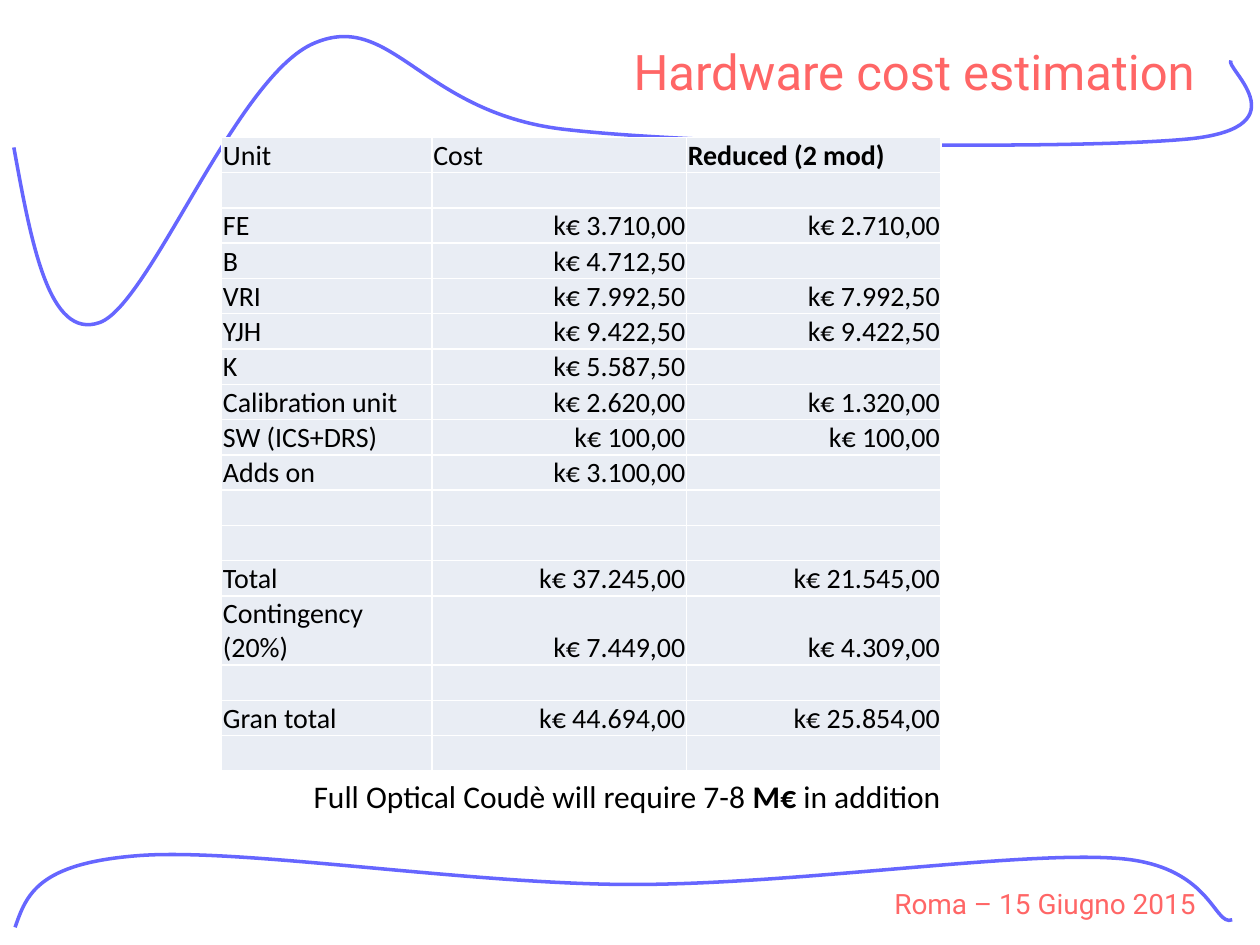
from dataclasses import dataclass

import pptx
import pptx.dml.color
import pptx.enum.text
import pptx.oxml.ns
import pptx.util
from lxml import etree

Inches = pptx.util.Inches
Pt = pptx.util.Pt
ALIGN = pptx.enum.text.PP_ALIGN
ANCHOR = pptx.enum.text.MSO_ANCHOR


@dataclass(frozen=True)
class Theme:
    curve: str = "6666FF"
    accent: str = "FF6666"
    ink: str = "000000"
    cell: str = "E9EDF4"
    heading_font: str = "Roboto"
    body_font: str = "Calibri"
    title_size: int = 28
    note_size: int = 18
    table_size: int = 16
    date_size: int = 16
    curve_width: int = 2


THEME = Theme()

# Each curve: box (left, top, width, height), start, cubic segments.
TOP_CURVE = (
    (0.11, 0.29, 9.82, 2.29),
    (0.11, 1.17),
    [
        [(0.25, 1.94), (0.39, 2.7), (0.79, 2.56)],
        [(1.19, 2.42), (1.88, 0.59), (2.5, 0.34)],
        [(3.12, 0.08), (3.35, 0.91), (4.51, 1.03)],
        [(5.67, 1.16), (8.58, 1.19), (9.46, 1.1)],
        [(10.34, 1), (9.71, 0.53), (9.77, 0.48)],
    ],
)
BOTTOM_CURVE = (
    (0.12, 6.78, 9.66, 0.58),
    (0.12, 7.36),
    [
        [(0.21, 7.1), (0.3, 6.85), (1.11, 6.79)],
        [(1.93, 6.73), (3.73, 7.02), (5.02, 7.02)],
        [(6.3, 7.02), (8.03, 6.76), (8.83, 6.81)],
        [(9.62, 6.85), (9.63, 7.36), (9.78, 7.3)],
    ],
)

BLANK = ("", "", "")
COSTS = [
    ("Unit", "Cost", "Reduced (2 mod)"),
    BLANK,
    ("FE", "k€ 3.710,00", "k€ 2.710,00"),
    ("B", "k€ 4.712,50", ""),
    ("VRI", "k€ 7.992,50", "k€ 7.992,50"),
    ("YJH", "k€ 9.422,50", "k€ 9.422,50"),
    ("K", "k€ 5.587,50", ""),
    ("Calibration unit", "k€ 2.620,00", "k€ 1.320,00"),
    ("SW (ICS+DRS)", "k€ 100,00", "k€ 100,00"),
    ("Adds on", "k€ 3.100,00", ""),
    BLANK,
    BLANK,
    ("Total", "k€ 37.245,00", "k€ 21.545,00"),
    ("Contingency (20%)", "k€ 7.449,00", "k€ 4.309,00"),
    BLANK,
    ("Gran total", "k€ 44.694,00", "k€ 25.854,00"),
    BLANK,
]
COLUMN_WIDTHS = (1.67, 2.02, 2.02)
ROW_HEIGHT = 0.28
TWO_LINE_HEIGHT = 0.55


def rgb(value):
    return pptx.dml.color.RGBColor.from_string(value)


def write_text(tf, runs, *, font, size, color, align=ALIGN.LEFT):
    """Fill the first paragraph with (text, bold) runs."""
    p = tf.paragraphs[0]
    p.alignment = align
    for text, bold in runs:
        r = p.add_run()
        r.text = text
        r.font.name = font
        r.font.size = Pt(size)
        r.font.bold = bold
        r.font.color.rgb = rgb(color)


def add_text(slide, box, runs, *, wrap=True, anchor=ANCHOR.TOP, **style):
    tf = slide.shapes.add_textbox(*map(Inches, box)).text_frame
    tf.word_wrap = wrap
    tf.vertical_anchor = anchor
    write_text(tf, runs, **style)


def add_curve(slide, box, start, segments):
    """Draw an open Bezier curve whose drawn extent is box."""
    left, top, width, height = box
    builder = slide.shapes.build_freeform(Inches(left), Inches(top))
    builder.add_line_segments(
        [(Inches(left + width), Inches(top + height))], close=False)
    sp = builder.convert_to_shape()
    sp.shadow.inherit = False
    sp.fill.background()
    sp.line.color.rgb = rgb(THEME.curve)
    sp.line.width = Pt(THEME.curve_width)

    qn = pptx.oxml.ns.qn
    outline = sp.element.find(".//" + qn("a:path"))
    for step in list(outline):
        outline.remove(step)
    steps = [("a:moveTo", [start])] + [("a:cubicBezTo", s) for s in segments]
    for tag, points in steps:
        step = etree.SubElement(outline, qn(tag))
        for x, y in points:
            etree.SubElement(step, qn("a:pt"), x=str(Inches(x - left)),
                             y=str(Inches(y - top)))


def format_cell(cell, text, *, bold, align):
    cell.fill.solid()
    cell.fill.fore_color.rgb = rgb(THEME.cell)
    cell.vertical_anchor = ANCHOR.BOTTOM
    cell.margin_left = cell.margin_right = cell.margin_top = Inches(0.01)
    cell.margin_bottom = 0
    if text:
        write_text(cell.text_frame, [(text, bold)], font=THEME.body_font,
                   size=THEME.table_size, color=THEME.ink, align=align)
    else:
        # The end mark sets the line height of an empty cell.
        end = cell.text_frame.paragraphs[0]._p.get_or_add_endParaRPr()
        end.set("sz", str(THEME.table_size * 100))


def add_cost_table(slide, left, top):
    heights = [TWO_LINE_HEIGHT if row[0].startswith("Contingency")
               else ROW_HEIGHT for row in COSTS]
    table = slide.shapes.add_table(
        len(COSTS), len(COLUMN_WIDTHS), Inches(left), Inches(top),
        Inches(sum(COLUMN_WIDTHS)), Inches(sum(heights))).table
    table.first_row = False
    table.horz_banding = False
    for column, width in zip(table.columns, COLUMN_WIDTHS):
        column.width = Inches(width)
    for i, (values, height) in enumerate(zip(COSTS, heights)):
        table.rows[i].height = Inches(height)
        for j, text in enumerate(values):
            is_amount = i > 0 and j > 0
            format_cell(table.cell(i, j), text, bold=(i == 0 and j == 2),
                        align=ALIGN.RIGHT if is_amount else ALIGN.LEFT)


def main():
    prs = pptx.Presentation()
    prs.slide_width = Inches(10)
    prs.slide_height = Inches(7.5)
    slide = prs.slides.add_slide(prs.slide_layouts[6])

    for curve in (TOP_CURVE, BOTTOM_CURVE):
        add_curve(slide, *curve)
    add_text(slide, (7, 6.99, 2.65, 0.37), [("Roma – 15 Giugno 2015", False)],
             wrap=False, font=THEME.heading_font, size=THEME.date_size,
             color=THEME.accent)
    add_text(slide, (3.67, 0.21, 5.91, 0.71),
             [("Hardware cost estimation", False)], anchor=ANCHOR.MIDDLE,
             font=THEME.heading_font, size=THEME.title_size,
             color=THEME.accent, align=ALIGN.RIGHT)
    add_cost_table(slide, 1.76, 1.09)
    add_text(slide, (2.39, 6.12, 5.48, 0.4),
             [("Full Optical Coudè will require 7-8", False), (" M€ ", True),
              ("in addition", False)],
             font=THEME.body_font, size=THEME.note_size, color=THEME.ink)
    prs.save("out.pptx")


if __name__ == "__main__":
    main()
